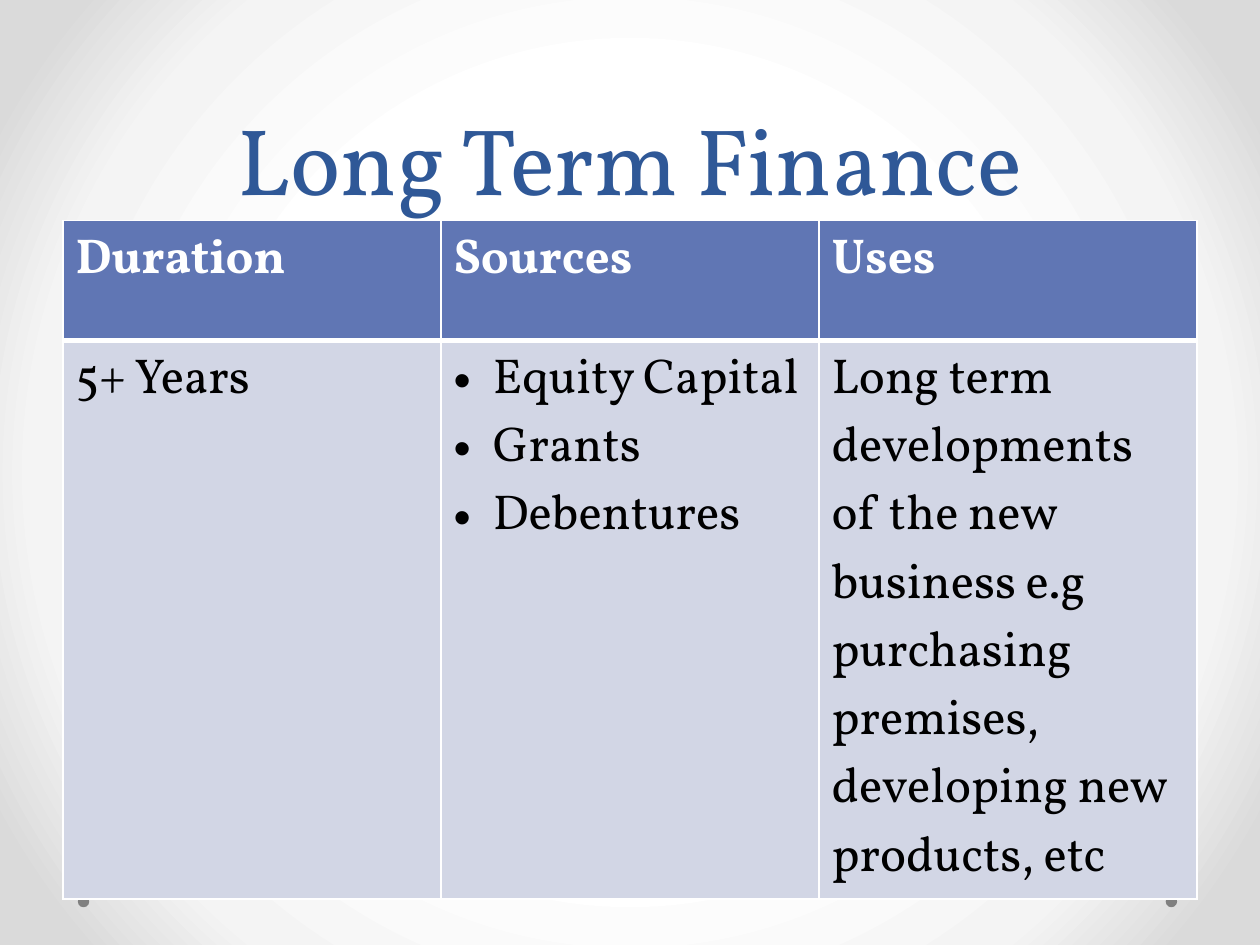
from pptx import Presentation
from pptx.dml.color import RGBColor
from pptx.enum import shapes, text
from pptx.oxml import parse_xml
from pptx.oxml.ns import nsdecls, qn
from pptx.util import Cm, Pt

TITLE = "Long Term Finance"
ROWS = [
    [["Duration"], ["Sources"], ["Uses"]],
    [
        ["5+ Years"],
        ["Equity Capital", "Grants", "Debentures"],
        ["Long term developments of the new business e.g purchasing premises, "
         "developing new products, etc"],
    ],
]
ROW_HEIGHTS = [2.41, 9.47]
COLUMN_WIDTH = 7.62
MARGIN, TABLE_TOP = 1.27, 4.45
DOT_SIZE, DOT_TOP, DOT_LEFTS = 0.23, 18.06, [23.5, 1.57]
FONT = "Vollkorn"
COLORS = {
    "title": "2F5897", "header": "6076B4", "body": "D2D6E5",
    "white": "FFFFFF", "black": "000000", "dot": "808080",
}
BACKGROUND_STOPS = [(50, "FFFFFF"), (76, "F4F4F4"), (92, "DADADA")]


def color(name):
    return RGBColor.from_string(COLORS[name])


def format_runs(paragraph, size, color_name, bold=False):
    for run in paragraph.runs:
        run.font.name = FONT
        run.font.size = Pt(size)
        run.font.bold = bold
        run.font.color.rgb = color(color_name)


def set_background(slide):
    slide.background.fill.gradient()
    stops = "".join(
        f'<a:gs pos="{position * 1000}"><a:srgbClr val="{value}"/></a:gs>'
        for position, value in BACKGROUND_STOPS
    )
    gradient = parse_xml(
        f'<a:gradFill {nsdecls("a")} rotWithShape="1"><a:gsLst>{stops}</a:gsLst>'
        '<a:path path="circle"><a:fillToRect l="50000" t="50000" r="50000" b="50000"/>'
        '</a:path></a:gradFill>'
    )
    current = slide.element.find(".//" + qn("a:gradFill"))
    current.getparent().replace(current, gradient)


def add_dots(slide):
    for left in DOT_LEFTS:
        dot = slide.shapes.add_shape(
            shapes.MSO_SHAPE.OVAL, Cm(left), Cm(DOT_TOP), Cm(DOT_SIZE), Cm(DOT_SIZE))
        dot.shadow.inherit = False
        dot.fill.solid()
        dot.fill.fore_color.rgb = color("dot")
        dot.line.fill.background()


def add_title(slide):
    title = slide.shapes.title
    title.left, title.top, title.width, title.height = Cm(MARGIN), Cm(0), Cm(22.86), Cm(4.45)
    frame = title.text_frame
    frame.text = TITLE
    frame.auto_size = text.MSO_AUTO_SIZE.NONE
    frame.vertical_anchor = text.MSO_ANCHOR.BOTTOM
    paragraph = frame.paragraphs[0]
    paragraph.alignment = text.PP_ALIGN.CENTER
    paragraph.line_spacing = Pt(58)
    format_runs(paragraph, 54, "title")


def set_borders(cell, widths):
    properties = cell._tc.get_or_add_tcPr()
    for index, (side, width) in enumerate(widths.items()):
        properties.insert(index, parse_xml(
            f'<a:ln{side} {nsdecls("a")} w="{Pt(width)}"><a:solidFill>'
            f'<a:srgbClr val="{COLORS["white"]}"/></a:solidFill></a:ln{side}>'))


def set_bullet(paragraph):
    properties = paragraph._p.get_or_add_pPr()
    properties.set("marL", str(Cm(0.79)))
    properties.set("indent", str(-Cm(0.79)))
    properties.append(parse_xml(f'<a:buFont {nsdecls("a")} typeface="Arial"/>'))
    properties.append(parse_xml(f'<a:buChar {nsdecls("a")} char="•"/>'))


def fill_cell(cell, lines, is_header):
    cell.fill.solid()
    cell.fill.fore_color.rgb = color("header" if is_header else "body")
    set_borders(cell, {"L": 1, "R": 1, "T": 1 if is_header else 3, "B": 3 if is_header else 1})
    cell.text_frame.text = "\n".join(lines)
    for paragraph in cell.text_frame.paragraphs:
        format_runs(paragraph, 28, "white" if is_header else "black", is_header)
        if len(lines) > 1:
            set_bullet(paragraph)


def add_finance_table(slide):
    column_count = len(ROWS[0])
    table = slide.shapes.add_table(
        len(ROWS), column_count, Cm(MARGIN), Cm(TABLE_TOP),
        Cm(COLUMN_WIDTH * column_count), Cm(sum(ROW_HEIGHTS))).table
    for column in table.columns:
        column.width = Cm(COLUMN_WIDTH)
    for row_index, (row, height) in enumerate(zip(ROWS, ROW_HEIGHTS)):
        table.rows[row_index].height = Cm(height)
        for column_index, lines in enumerate(row):
            fill_cell(table.cell(row_index, column_index), lines, row_index == 0)


def main():
    presentation = Presentation()
    presentation.slide_width, presentation.slide_height = Cm(25.4), Cm(19.05)
    slide = presentation.slides.add_slide(presentation.slide_layouts[5])
    set_background(slide)
    add_dots(slide)
    add_title(slide)
    add_finance_table(slide)
    presentation.save("out.pptx")


if __name__ == "__main__":
    main()
